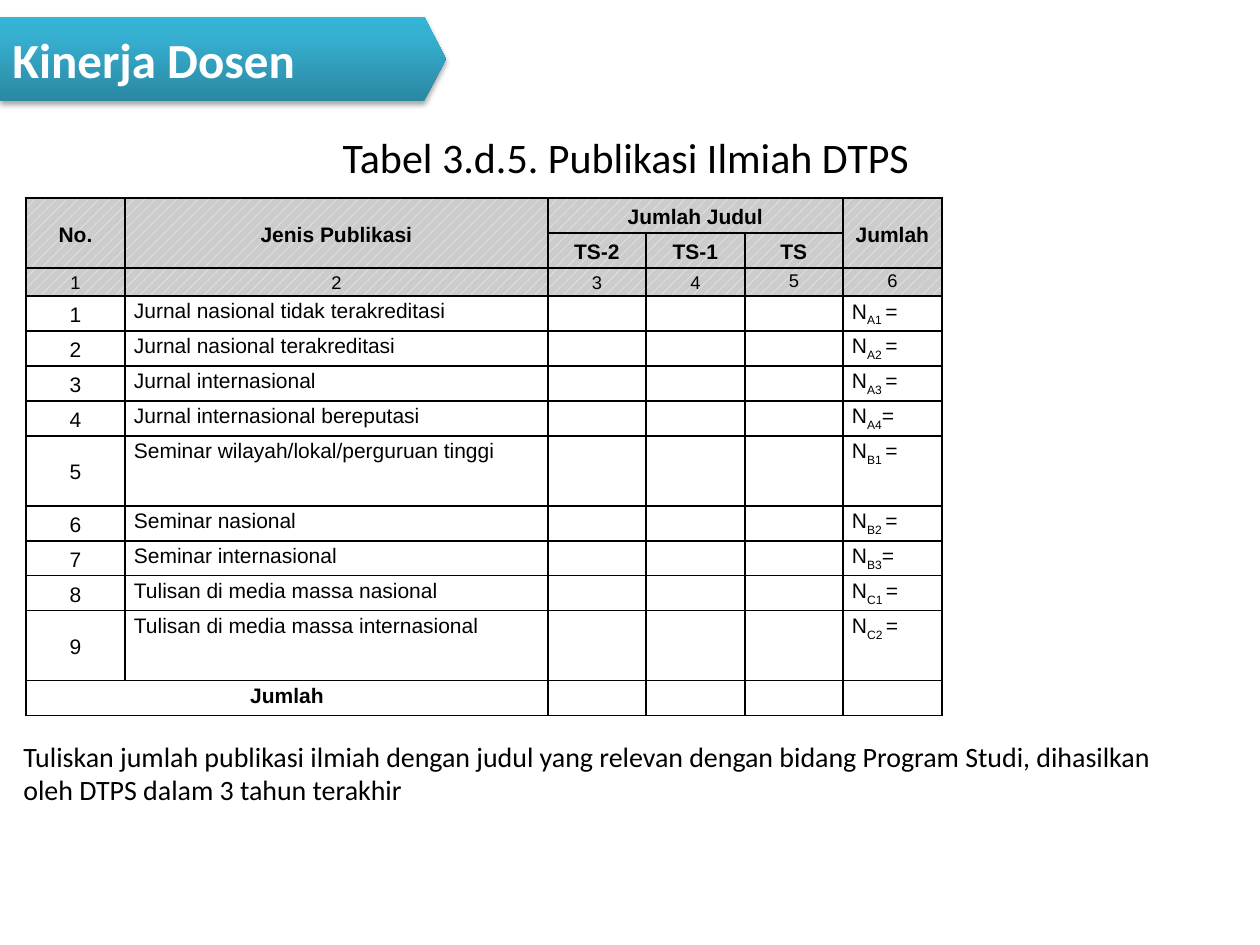
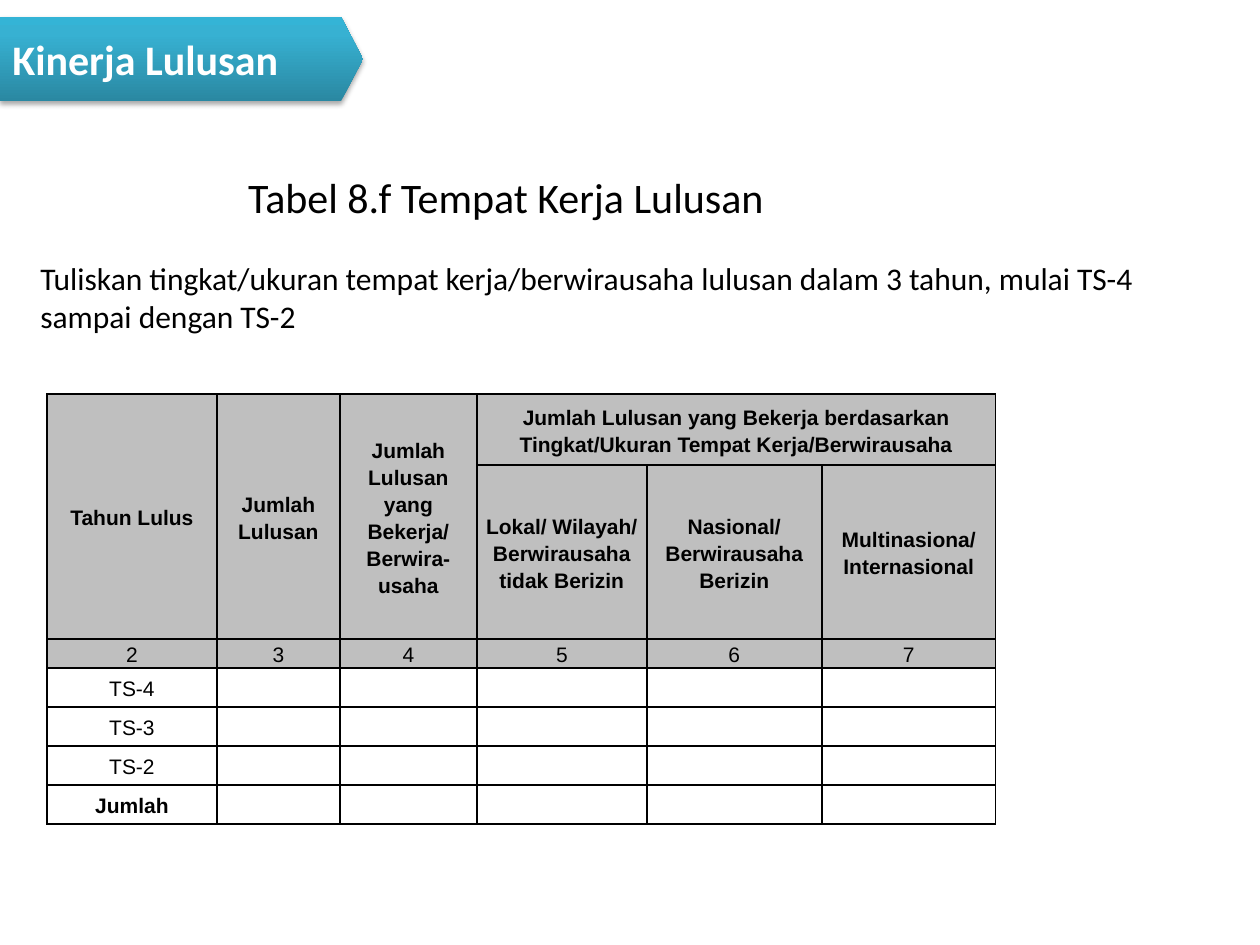
from dataclasses import dataclass

from lxml import etree
from pptx import Presentation
from pptx import util as u
from pptx.dml.color import RGBColor
from pptx.enum import dml, shapes, text
from pptx.oxml.ns import qn

SCALE = u.Inches(1) / 126
BLACK, WHITE = "000000", "FFFFFF"
HEADING_FONT, TABLE_FONT = "Calibri", "Arial"
BANNER_STOPS = ((0, "2A88A2"), (80, "37B1D2"), (100, "34B4D6"))
LINE_SPACING = 1.15
HEADER_ROWS = 2
NUMBER_ROW = 2


@dataclass(frozen=True)
class Banner:
    label: str
    width: int
    size: int


@dataclass(frozen=True)
class Label:
    wording: str
    left: int
    top: int
    width: int
    height: int
    size: int
    is_title: bool = False


@dataclass(frozen=True)
class Grid:
    left: int
    top: int
    columns: tuple[int, ...]
    rows: tuple[int, ...]
    cells: list[list[str]]
    merges: tuple[tuple[int, int, int, int], ...]
    header_fill: str
    patterned: bool = False
    number_size: float = 12
    left_columns: tuple[int, ...] = ()
    top_cells: tuple[tuple[int, int], ...] = ()


def px(length: int) -> u.Emu:
    return u.Emu(round(length * SCALE))


def rgb(value: str) -> RGBColor:
    return RGBColor.from_string(value)


def set_font(paragraph, name: str, size: float, color: str, bold: bool = False) -> None:
    font = paragraph.font
    font.name, font.size, font.bold = name, u.Pt(size), bold
    font.color.rgb = rgb(color)


def add_color(parent, value: str):
    return etree.SubElement(parent, qn("a:srgbClr"), val=value)


def draw_banner(slide, banner: Banner) -> None:
    shape = slide.shapes.add_shape(
        shapes.MSO_SHAPE.PENTAGON, 0, px(17), px(banner.width), px(84)
    )
    shape.adjustments[0] = 0.26
    shape.line.fill.background()
    shape.fill.gradient()
    shape.fill.gradient_angle = 90
    properties = shape._element.spPr
    stops = properties.find(".//" + qn("a:gsLst"))
    stops.clear()
    for position, color in BANNER_STOPS:
        add_color(etree.SubElement(stops, qn("a:gs"), pos=str(position * 1000)), color)

    shape.shadow.inherit = False
    shadow = etree.SubElement(
        properties.find(qn("a:effectLst")), qn("a:outerShdw"),
        blurRad="40000", dist="23000", dir="5400000", rotWithShape="0",
    )
    etree.SubElement(add_color(shadow, BLACK), qn("a:alpha"), val="35000")

    frame = shape.text_frame
    frame.vertical_anchor = text.MSO_ANCHOR.MIDDLE
    paragraph = frame.paragraphs[0]
    paragraph.text = banner.label
    paragraph.alignment = text.PP_ALIGN.LEFT
    set_font(paragraph, HEADING_FONT, banner.size, WHITE, True)


def draw_label(slide, label: Label) -> None:
    box = slide.shapes.add_textbox(
        px(label.left), px(label.top), px(label.width), px(label.height)
    )
    frame = box.text_frame
    frame.word_wrap = True
    paragraph = frame.paragraphs[0]
    paragraph.text = label.wording
    if label.is_title:
        frame.vertical_anchor = text.MSO_ANCHOR.MIDDLE
        paragraph.alignment = text.PP_ALIGN.CENTER
    set_font(paragraph, HEADING_FONT, label.size, BLACK)


def set_borders(cell, row: int) -> None:
    bottom_row = row + cell.span_height - 1
    widths = {
        "a:lnL": 1,
        "a:lnR": 1,
        "a:lnT": 1.5 if row == NUMBER_ROW else 1,
        "a:lnB": 1.5 if bottom_row == NUMBER_ROW - 1 else 1,
    }
    properties = cell._tc.get_or_add_tcPr()
    for index, (side, width) in enumerate(widths.items()):
        line = etree.Element(qn(side), w=str(u.Pt(width)))
        add_color(etree.SubElement(line, qn("a:solidFill")), BLACK)
        properties.insert(index, line)


def fill_cell(cell, grid: Grid, row: int) -> None:
    if row > NUMBER_ROW:
        cell.fill.background()
    elif grid.patterned:
        cell.fill.patterned()
        cell.fill.pattern = dml.MSO_PATTERN.PERCENT_20
        cell.fill.fore_color.rgb = rgb(WHITE)
        cell.fill.back_color.rgb = rgb(grid.header_fill)
    else:
        cell.fill.solid()
        cell.fill.fore_color.rgb = rgb(grid.header_fill)


def write_cell(cell, grid: Grid, row: int, column: int) -> None:
    cell.margin_left = cell.margin_right = px(9)
    cell.margin_top = cell.margin_bottom = 0
    is_left = row > NUMBER_ROW and column in grid.left_columns
    is_top = is_left or (row, column) in grid.top_cells
    cell.vertical_anchor = text.MSO_ANCHOR.TOP if is_top else text.MSO_ANCHOR.MIDDLE

    paragraph = cell.text_frame.paragraphs[0]
    paragraph.alignment = text.PP_ALIGN.LEFT if is_left else text.PP_ALIGN.CENTER
    paragraph.line_spacing = LINE_SPACING
    is_bold = row < HEADER_ROWS or row == len(grid.rows) - 1
    size = grid.number_size if row == NUMBER_ROW else 12
    set_font(paragraph, TABLE_FONT, size, BLACK, is_bold)

    wording = grid.cells[row][column]
    if not wording:
        etree.SubElement(paragraph._p, qn("a:endParaRPr"), sz="1200")
        return
    for index, part in enumerate(wording.split("_")):
        run = paragraph.add_run()
        run.text = part
        if index % 2:
            run._r.get_or_add_rPr().set("baseline", "-25000")


def draw_grid(slide, grid: Grid) -> None:
    table = slide.shapes.add_table(
        len(grid.rows), len(grid.columns), px(grid.left), px(grid.top),
        px(sum(grid.columns)), px(sum(grid.rows)),
    ).table
    table.first_row = table.horz_banding = False
    for column, width in zip(table.columns, grid.columns):
        column.width = px(width)
    for row, height in zip(table.rows, grid.rows):
        row.height = px(height)
    for top, left, bottom, right in grid.merges:
        table.cell(top, left).merge(table.cell(bottom, right))
    for row in range(len(grid.rows)):
        for column in range(len(grid.columns)):
            cell = table.cell(row, column)
            write_cell(cell, grid, row, column)
            fill_cell(cell, grid, row)
            set_borders(cell, row)


PUBLICATIONS = (
    ("Jurnal nasional tidak terakreditasi", "N_A1 _="),
    ("Jurnal nasional terakreditasi", "N_A2 _="),
    ("Jurnal internasional", "N_A3 _="),
    ("Jurnal internasional bereputasi", "N_A4_="),
    ("Seminar wilayah/lokal/perguruan tinggi", "N_B1 _="),
    ("Seminar nasional", "N_B2 _="),
    ("Seminar internasional", "N_B3_="),
    ("Tulisan di media massa nasional", "N_C1 _="),
    ("Tulisan di media massa internasional", "N_C2 _="),
)

PUBLICATION_GRID = Grid(
    left=26, top=198,
    columns=(99, 423, 98, 99, 98, 99),
    rows=(35, 35, 28, 35, 35, 35, 35, 70, 35, 35, 35, 70, 35),
    cells=[
        ["No.", "Jenis Publikasi", "Jumlah Judul", "", "", "Jumlah"],
        ["", "", "TS-2", "TS-1", "TS", ""],
        [str(number) for number in range(1, 7)],
        *(
            [str(number), kind, "", "", "", total]
            for number, (kind, total) in enumerate(PUBLICATIONS, 1)
        ),
        ["Jumlah"] + [""] * 5,
    ],
    merges=((0, 0, 1, 0), (0, 1, 1, 1), (0, 2, 0, 4), (0, 5, 1, 5), (12, 0, 12, 1)),
    header_fill="CCCCCC", patterned=True, number_size=10.5,
    left_columns=(1, 5), top_cells=((2, 4), (2, 5), (12, 0)),
)

WORKPLACE_GRID = Grid(
    left=47, top=394,
    columns=(170, 123, 137, 170, 175, 174),
    rows=(71, 174, 29, 39, 39, 39, 39),
    cells=[
        [
            "Tahun Lulus", "Jumlah Lulusan",
            "Jumlah Lulusan yang Bekerja/ Berwira-usaha",
            "Jumlah Lulusan yang Bekerja berdasarkan "
            "Tingkat/Ukuran Tempat Kerja/Berwirausaha", "", "",
        ],
        [
            "", "", "", "Lokal/ Wilayah/ Berwirausaha tidak Berizin",
            "Nasional/ Berwirausaha Berizin", "Multinasiona/ Internasional",
        ],
        [str(number) for number in range(2, 8)],
        *([year] + [""] * 5 for year in ("TS-4", "TS-3", "TS-2", "Jumlah")),
    ],
    merges=((0, 0, 1, 0), (0, 1, 1, 1), (0, 2, 1, 2), (0, 3, 0, 5)),
    header_fill="BFBFBF",
)

SLIDES = (
    (
        Banner("Kinerja Dosen", 446, 28),
        Label("Tabel 3.d.5. Publikasi Ilmiah DTPS", 26, 100, 1200, 113, 24, True),
        Label(
            "Tuliskan jumlah publikasi ilmiah dengan judul yang relevan dengan bidang "
            "Program Studi, dihasilkan oleh DTPS dalam 3 tahun terakhir",
            11, 733, 1200, 81, 16,
        ),
        PUBLICATION_GRID,
    ),
    (
        Banner("Kinerja Lulusan", 363, 24),
        Label("Tabel 8.f Tempat Kerja Lulusan", 28, 140, 956, 113, 24, True),
        Label(
            "Tuliskan tingkat/ukuran tempat kerja/berwirausaha lulusan dalam 3 tahun, "
            "mulai TS-4 sampai dengan TS-2",
            28, 253, 1158, 89, 18,
        ),
        WORKPLACE_GRID,
    ),
)


def main() -> None:
    presentation = Presentation()
    presentation.slide_width, presentation.slide_height = px(1260), px(945)
    for banner, title, instruction, grid in SLIDES:
        slide = presentation.slides.add_slide(presentation.slide_layouts[6])
        draw_label(slide, title)
        draw_label(slide, instruction)
        draw_banner(slide, banner)
        draw_grid(slide, grid)
    presentation.save("out.pptx")


if __name__ == "__main__":
    main()
